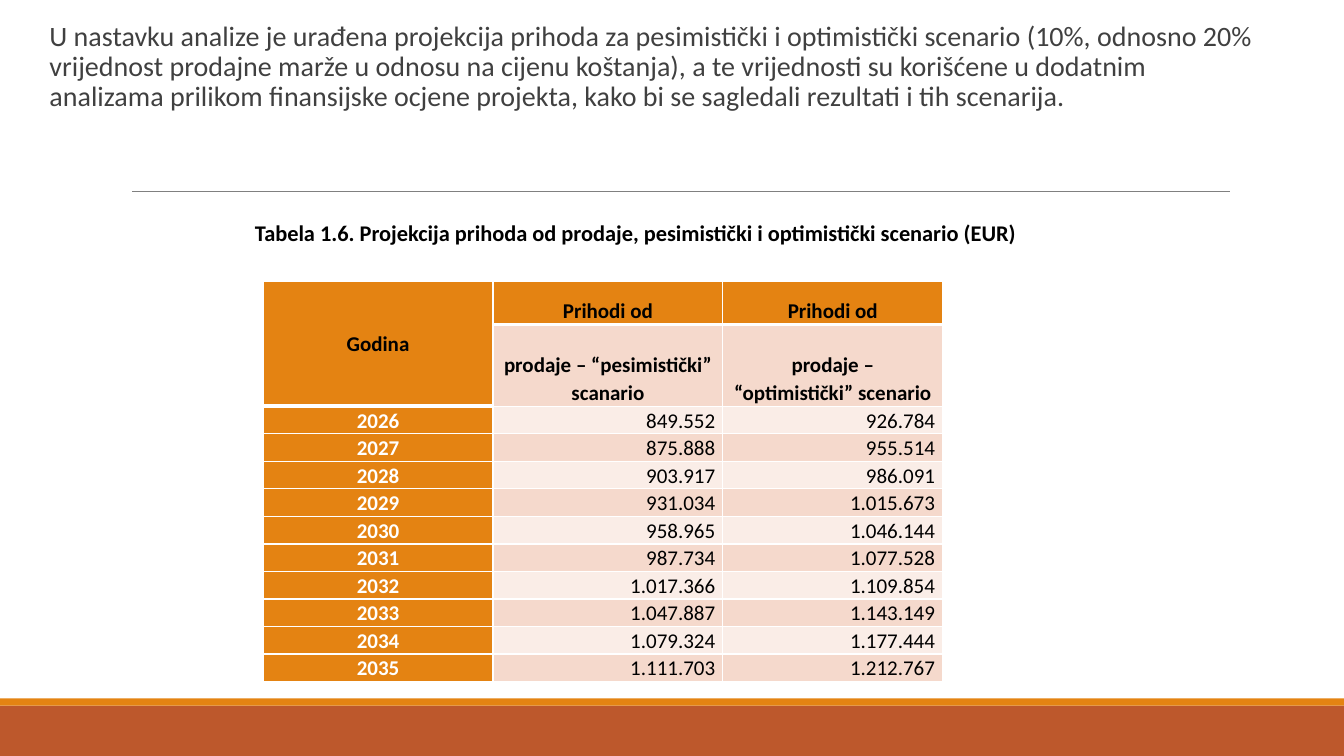
from lxml import etree
from pptx import Presentation
from pptx import util as u
from pptx.dml.color import RGBColor
from pptx.enum import shapes, text
from pptx.oxml.ns import qn

COLORS = {
    "orange": "E48312", "rust": "BD582C", "rule": "808080", "body": "404040",
    "black": "000000", "white": "FFFFFF", "band": "F5D9CC", "pale": "FAEDE7",
}
ALIGN = text.PP_ALIGN
ANCHOR = text.MSO_ANCHOR


def write(frame, words, size=15, color="black", bold=False, align=ALIGN.LEFT, spacing=1.0):
    """Fill the frame's first paragraph with one formatted run and return the paragraph."""
    para = frame.paragraphs[0]
    para.alignment = align
    para.line_spacing = spacing
    span = para.add_run()
    span.text = words
    span.font.name = "Calibri"
    span.font.size = u.Pt(size)
    span.font.bold = bold
    span.font.color.rgb = RGBColor.from_string(COLORS[color])
    return para


def format_cell(cell, fill, bottom_width=1):
    """Set the cell's margins, white borders and fill."""
    cell.margin_left = cell.margin_right = u.Pt(5.4)
    cell.margin_top = cell.margin_bottom = 0
    properties = cell._tc.get_or_add_tcPr()
    for side, width in (("lnL", 1), ("lnR", 1), ("lnT", 1), ("lnB", bottom_width)):
        border = etree.SubElement(properties, qn(f"a:{side}"), w=str(u.Pt(width)))
        solid = etree.SubElement(border, qn("a:solidFill"))
        etree.SubElement(solid, qn("a:srgbClr"), val=COLORS["white"])
    cell.fill.solid()
    cell.fill.fore_color.rgb = RGBColor.from_string(COLORS[fill])


deck = Presentation()
deck.slide_width = u.Inches(13.33)
deck.slide_height = u.Inches(7.5)
page = deck.slides.add_slide(deck.slide_layouts[1])
title = page.shapes.title
title.element.getparent().remove(title.element)

# Footer bars and rule
for top, height, color in ((7, 0.5, "rust"), (6.93, 0.07, "orange")):
    bar = page.shapes.add_shape(
        shapes.MSO_SHAPE.RECTANGLE, 0, u.Inches(top), deck.slide_width, u.Inches(height))
    bar.shadow.inherit = False
    bar.fill.solid()
    bar.fill.fore_color.rgb = RGBColor.from_string(COLORS[color])
    bar.line.fill.background()

rule = page.shapes.add_connector(
    shapes.MSO_CONNECTOR.STRAIGHT, u.Inches(1.31), u.Inches(1.9), u.Inches(12.2), u.Inches(1.9))
rule.line.color.rgb = RGBColor.from_string(COLORS["rule"])
rule.line.width = u.Pt(0.5)
etree.SubElement(rule.element.spPr, qn("a:effectLst"))

# Introduction
intro = page.placeholders[1]
intro.left, intro.top = u.Inches(0.39), u.Inches(0.17)
intro.width, intro.height = u.Inches(12.07), u.Inches(6.25)
frame = intro.text_frame
frame.auto_size = text.MSO_AUTO_SIZE.NONE
frame.vertical_anchor = ANCHOR.TOP
frame.margin_left = frame.margin_right = 0
frame.margin_top = frame.margin_bottom = u.Inches(0.05)
para = write(
    frame,
    "U nastavku analize je urađena projekcija prihoda za pesimistički i optimistički scenario "
    "(10%, odnosno 20% vrijednost prodajne marže u odnosu na cijenu koštanja), a te vrijednosti "
    "su korišćene u dodatnim analizama prilikom finansijske ocjene projekta, kako bi se sagledali "
    "rezultati i tih scenarija.",
    size=20, color="body", spacing=0.9)
para.space_before, para.space_after = u.Pt(12), u.Pt(2)
properties = para._p.get_or_add_pPr()
properties.set("marL", str(u.Inches(0.1)))
properties.set("indent", "0")
etree.SubElement(properties, qn("a:buNone"))

# Revenue table
HEADERS = [
    ("Godina", "Prihodi od", "Prihodi od"),
    ("", "prodaje – “pesimistički” scanario", "prodaje – “optimistički” scenario"),
]
REVENUES = [
    ("849.552", "926.784"), ("875.888", "955.514"), ("903.917", "986.091"),
    ("931.034", "1.015.673"), ("958.965", "1.046.144"), ("987.734", "1.077.528"),
    ("1.017.366", "1.109.854"), ("1.047.887", "1.143.149"), ("1.079.324", "1.177.444"),
    ("1.111.703", "1.212.767"),
]
rows = HEADERS + [(str(year), *values) for year, values in enumerate(REVENUES, 2026)]
table = page.shapes.add_table(
    len(rows), 3, u.Inches(2.61), u.Inches(2.79), u.Inches(6.74), u.Inches(3.84)).table
for column, width in zip(table.columns, (2.28, 2.28, 2.18)):
    column.width = u.Inches(width)
for row, height in zip(table.rows, [0.43, 0.81] + [0.26] * len(REVENUES)):
    row.height = u.Inches(height)
table.cell(0, 0).merge(table.cell(1, 0))

for r, row in enumerate(rows):
    for c, words in enumerate(row):
        cell = table.cell(r, c)
        if cell.is_spanned:
            continue
        is_header, is_year = r < len(HEADERS), c == 0
        fill = "orange" if r == 0 or is_year else "band" if r % 2 else "pale"
        format_cell(cell, fill, bottom_width=3 if r == 0 else 1)
        cell.vertical_anchor = ANCHOR.MIDDLE if is_header and is_year else ANCHOR.BOTTOM
        write(cell.text_frame, words, bold=is_header or is_year, spacing=1.07,
              color="white" if is_year and not is_header else "black",
              align=ALIGN.CENTER if is_header or is_year else ALIGN.RIGHT)

# Table caption
caption = page.shapes.add_textbox(u.Inches(2.43), u.Inches(2.12), u.Inches(7.85), u.Inches(0.67))
caption.text_frame.word_wrap = False
write(caption.text_frame,
      "Tabela 1.6. Projekcija prihoda od prodaje, pesimistički i optimistički scenario (EUR)",
      size=16, bold=True)

deck.save("out.pptx")
